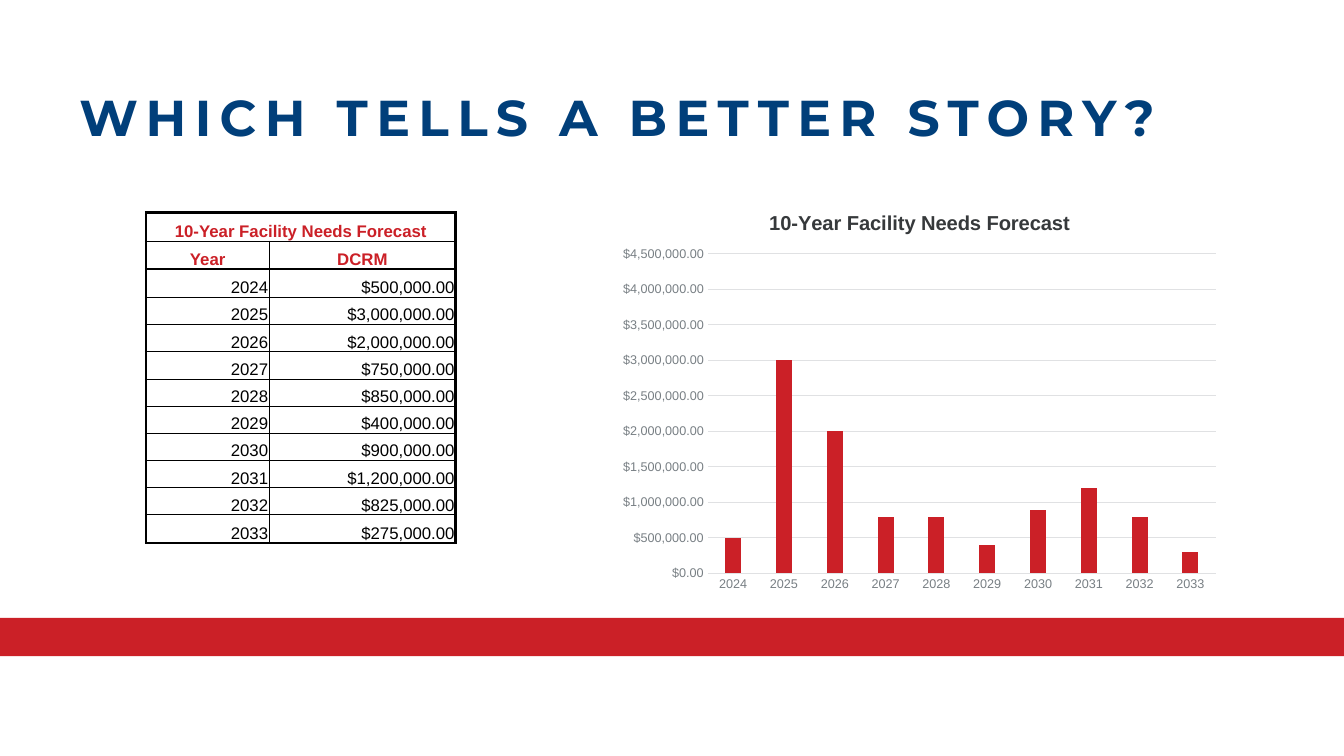
from dataclasses import dataclass

from lxml import etree
from pptx import Presentation
from pptx.chart.data import CategoryChartData
from pptx.dml.color import RGBColor
from pptx.enum.chart import XL_CHART_TYPE, XL_TICK_MARK
from pptx.enum.shapes import MSO_SHAPE
from pptx.enum.text import MSO_ANCHOR, PP_ALIGN
from pptx.oxml import parse_xml
from pptx.oxml.ns import nsdecls, qn
from pptx.util import Inches, Pt

COLUMNS = XL_CHART_TYPE.COLUMN_CLUSTERED
NO_TICK = XL_TICK_MARK.NONE
RECTANGLE = MSO_SHAPE.RECTANGLE
MIDDLE, BOTTOM = MSO_ANCHOR.MIDDLE, MSO_ANCHOR.BOTTOM
LEFT, CENTER, RIGHT = PP_ALIGN.LEFT, PP_ALIGN.CENTER, PP_ALIGN.RIGHT

FORECAST_TITLE = "10-Year Facility Needs Forecast"
FORECAST = {
    "2024": 500000, "2025": 3000000, "2026": 2000000, "2027": 750000,
    "2028": 850000, "2029": 400000, "2030": 900000, "2031": 1200000,
    "2032": 825000, "2033": 275000,
}


@dataclass(frozen=True)
class Theme:
    heading_font: str = "Montserrat"
    body_font: str = "Arial"
    navy: str = "013F7A"
    red: str = "CB2027"
    black: str = "000000"
    charcoal: str = "36393B"
    gray: str = "787F84"
    rule: str = "E0E1E3"
    heading_size: float = 36
    chart_title_size: float = 14.4
    table_size: float = 12
    axis_size: float = 9
    heavy: float = 2
    thin: float = 0.5
    grid: float = 0.75


class ForecastSlide:
    def __init__(self, page, theme):
        self.page = page
        self.theme = theme

    def style(self, font, size, color, bold=False, name=None):
        font.name = name or self.theme.body_font
        font.size = Pt(size)
        font.bold = bold
        font.color.rgb = RGBColor.from_string(color)

    def band(self, left, top, width, height):
        band = self.page.shapes.add_shape(
            RECTANGLE, Inches(left), Inches(top), Inches(width), Inches(height))
        band.shadow.inherit = False
        band.fill.solid()
        band.fill.fore_color.rgb = RGBColor.from_string(self.theme.red)
        band.line.fill.background()

    def heading(self, text, left, top, width, height):
        box = self.page.shapes.add_textbox(
            Inches(left), Inches(top), Inches(width), Inches(height))
        frame = box.text_frame
        frame.word_wrap = True
        frame.vertical_anchor = MIDDLE
        para = frame.paragraphs[0]
        para.text = text
        para.alignment = LEFT
        para.line_spacing = 0.9
        self.style(para.font, self.theme.heading_size, self.theme.navy,
                   True, self.theme.heading_font)
        para.runs[0].font._element.set("spc", "600")

    def borders(self, cell, widths):
        """Draw cell edges; widths maps L, R, T and B (in that order) to points."""
        properties = cell._tc.get_or_add_tcPr()
        for side, width in widths.items():
            properties.append(parse_xml(
                f'<a:ln{side} {nsdecls("a")} w="{Pt(width)}"><a:solidFill>'
                f'<a:srgbClr val="{self.theme.black}"/></a:solidFill></a:ln{side}>'))

    def table(self, rows, header_rows, left, top, column_widths, row_heights):
        theme = self.theme
        table = self.page.shapes.add_table(
            len(rows), len(column_widths), Inches(left), Inches(top),
            Inches(sum(column_widths)), Inches(sum(row_heights))).table
        table.first_row = table.horz_banding = False
        for column, width in zip(table.columns, column_widths):
            column.width = Inches(width)
        for row, height in zip(table.rows, row_heights):
            row.height = Inches(height)

        last_row, last_column = len(rows) - 1, len(column_widths) - 1
        heavy_tops = (0, header_rows)
        heavy_bottoms = (header_rows - 1, last_row)
        for i, row in enumerate(rows):
            is_header = i < header_rows
            for j, text in enumerate(row):
                cell = table.cell(i, j)
                cell.margin_left = cell.margin_right = cell.margin_top = Inches(0.01)
                cell.margin_bottom = 0
                cell.vertical_anchor = BOTTOM
                para = cell.text_frame.paragraphs[0]
                para.text = text
                para.alignment = CENTER if is_header else RIGHT
                self.style(para.font, theme.table_size,
                           theme.red if is_header else theme.black, is_header)
                heavy = {"L": j == 0, "R": j == last_column,
                         "T": i in heavy_tops, "B": i in heavy_bottoms}
                if i == 0:
                    heavy["L"] = heavy["R"] = True
                self.borders(cell, {side: theme.heavy if strong else theme.thin
                                    for side, strong in heavy.items()})
                cell.fill.background()
        table.cell(0, 0).merge(table.cell(0, last_column))

    def axis(self, axis):
        axis.major_tick_mark = axis.minor_tick_mark = NO_TICK
        self.style(axis.tick_labels.font, self.theme.axis_size, self.theme.gray)

    def rule(self, line):
        line.color.rgb = RGBColor.from_string(self.theme.rule)
        line.width = Pt(self.theme.grid)

    def plot_area(self, chart, **fractions):
        """Fix the inner plot area as fractions x, y, w and h of the chart."""
        area = chart._chartSpace.chart.plotArea
        for old in area.findall(qn("c:layout")):
            area.remove(old)
        layout = etree.Element(qn("c:layout"))
        manual = etree.SubElement(layout, qn("c:manualLayout"))
        settings = {"layoutTarget": "inner", "xMode": "edge", "yMode": "edge", **fractions}
        for tag, value in settings.items():
            etree.SubElement(manual, qn(f"c:{tag}")).set("val", str(value))
        area.insert(0, layout)

    def column_chart(self, title, values, left, top, width, height):
        theme = self.theme
        data = CategoryChartData()
        data.categories = list(values)
        data.add_series("DCRM", list(values.values()))
        chart = self.page.shapes.add_chart(
            COLUMNS, Inches(left), Inches(top), Inches(width), Inches(height), data).chart
        self.style(chart.font, theme.axis_size, theme.charcoal)
        chart.has_legend = False
        chart.has_title = True
        para = chart.chart_title.text_frame.paragraphs[0]
        para.text = title
        self.style(para.font, theme.chart_title_size, theme.charcoal, True)
        chart.chart_title.include_in_layout = False

        plot = chart.plots[0]
        plot.vary_by_categories = False
        plot.gap_width, plot.overlap = 219, -27
        bars = plot.series[0].format
        bars.fill.solid()
        bars.fill.fore_color.rgb = RGBColor.from_string(theme.red)

        years, dollars = chart.category_axis, chart.value_axis
        self.axis(years)
        self.rule(years.format.line)
        self.axis(dollars)
        dollars.format.line.fill.background()
        dollars.minimum_scale, dollars.maximum_scale = 0, 4500000
        dollars.major_unit = 500000
        dollars.tick_labels.number_format = '"$"#,##0.00'
        dollars.tick_labels.number_format_is_linked = False
        self.rule(dollars.major_gridlines.format.line)
        self.plot_area(chart, x=0.96 / width, y=0.6 / height,
                       w=5.04 / width, h=3.17 / height)


def main():
    deck = Presentation()
    deck.slide_width, deck.slide_height = Inches(13.33), Inches(7.5)
    slide = ForecastSlide(deck.slides.add_slide(deck.slide_layouts[6]), Theme())
    slide.band(0, 6.13, 13.33, 0.38)
    rows = [(FORECAST_TITLE, ""), ("Year", "DCRM")]
    rows += [(year, f"${amount:,.2f}") for year, amount in FORECAST.items()]
    slide.table(rows, 2, 1.45, 2.11, [1.22, 1.85], [0.28] * 3 + [0.27] * 8 + [0.28])
    slide.heading("WHICH TELLS A BETTER STORY?", 0.69, 0.84, 11.5, 0.71)
    rounded = {year: round(amount, -5) for year, amount in FORECAST.items()}
    slide.column_chart(FORECAST_TITLE, rounded, 6.06, 1.92, 6.12, 4.04)
    deck.save("out.pptx")


if __name__ == "__main__":
    main()
